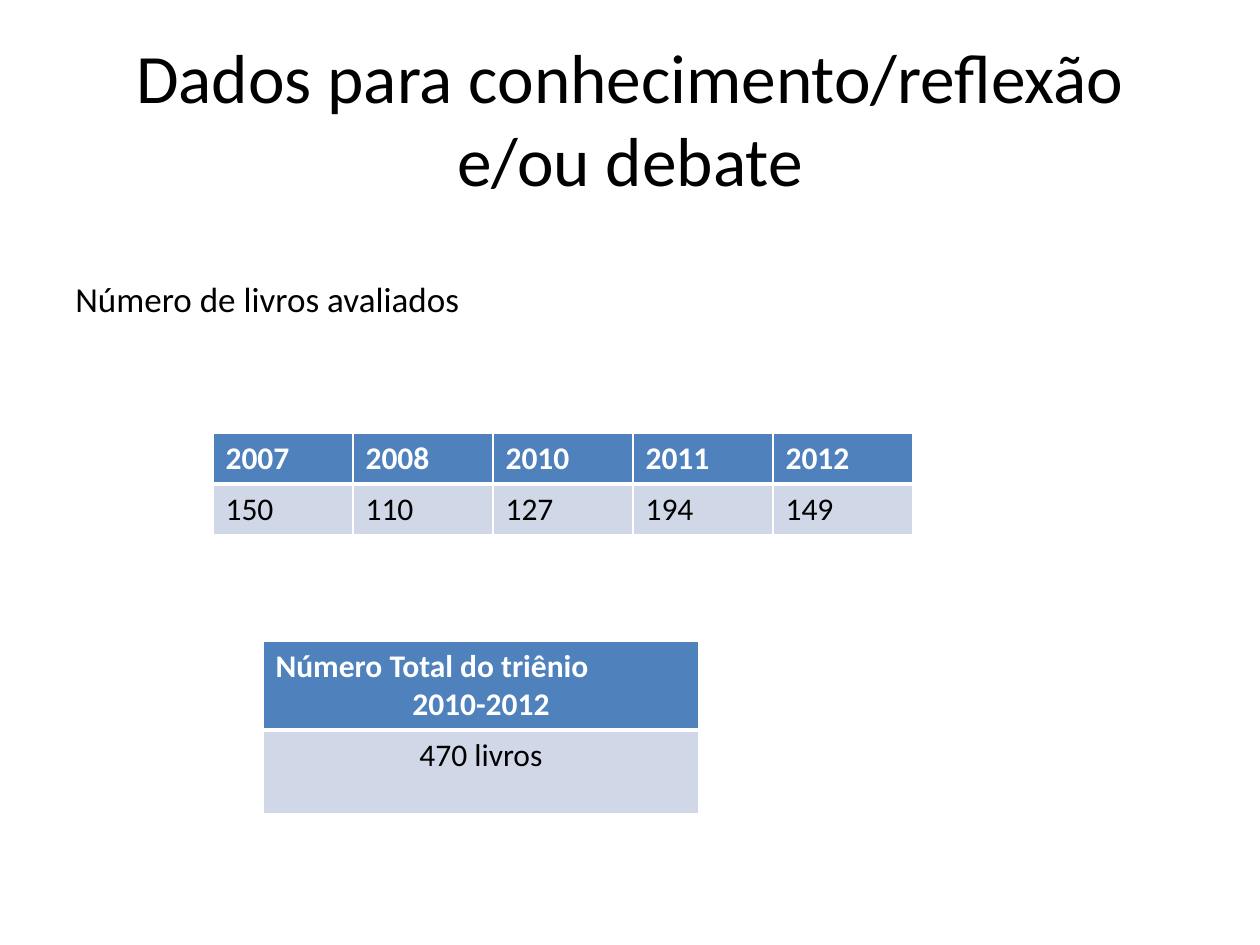
"""Build the slide on the number of evaluated books."""
import pptx
import pptx.dml.color
import pptx.enum.text
import pptx.oxml
import pptx.oxml.ns
import pptx.util

RGBColor = pptx.dml.color.RGBColor
ALIGN = pptx.enum.text.PP_ALIGN
ANCHOR = pptx.enum.text.MSO_ANCHOR

BLACK = RGBColor(0x00, 0x00, 0x00)
WHITE = RGBColor(0xFF, 0xFF, 0xFF)
HEADER_BLUE = RGBColor(0x4F, 0x81, 0xBD)
BODY_BLUE = RGBColor(0xD0, 0xD8, 0xE8)
FONT = "Calibri"
PX = 914400 / 126

TEXTS = [
    ((63, 38, 1134, 158), "Dados para conhecimento/reflexão e/ou debate",
     39.6, ALIGN.CENTER, ANCHOR.MIDDLE),
    ((63, 271, 1134, 56), "Número de livros avaliados",
     20, ALIGN.LEFT, ANCHOR.TOP),
]

TABLES = [
    {
        "origin": (213, 433),
        "column_width": 140,
        "row_heights": (51, 51),
        "rows": [
            [[(year, ALIGN.LEFT)] for year in ("2007", "2008", "2010", "2011", "2012")],
            [[(count, ALIGN.LEFT)] for count in ("150", "110", "127", "194", "149")],
        ],
    },
    {
        "origin": (263, 641),
        "column_width": 436,
        "row_heights": (89, 84),
        "rows": [
            [[("Número Total do triênio", ALIGN.LEFT), ("2010-2012", ALIGN.CENTER)]],
            [[("470 livros", ALIGN.CENTER)]],
        ],
    },
]


def px(length):
    return pptx.util.Emu(round(length * PX))


def write(frame, lines, size, color, bold=False):
    for index, (text, alignment) in enumerate(lines):
        paragraph = frame.add_paragraph() if index else frame.paragraphs[0]
        paragraph.alignment = alignment
        run = paragraph.add_run()
        run.text = text
        run.font.name = FONT
        run.font.size = pptx.util.Pt(size)
        run.font.bold = bold
        run.font.color.rgb = color


def set_borders(cell, widths):
    properties = cell._tc.get_or_add_tcPr()
    namespace = pptx.oxml.ns.nsdecls("a")
    for index, (side, width) in enumerate(widths.items()):
        border = pptx.oxml.parse_xml(
            f'<a:ln{side} {namespace} w="{pptx.util.Pt(width)}"><a:solidFill>'
            f'<a:srgbClr val="{WHITE}"/></a:solidFill></a:ln{side}>')
        properties.insert(index, border)


def add_text(slide, box, text, size, alignment, anchor):
    shape = slide.shapes.add_textbox(*map(px, box))
    frame = shape.text_frame
    frame.word_wrap = True
    frame.vertical_anchor = anchor
    write(frame, [(text, alignment)], size, BLACK)


def add_table(slide, origin, column_width, row_heights, rows):
    column_count = len(rows[0])
    size = (column_width * column_count, sum(row_heights))
    shape = slide.shapes.add_table(len(rows), column_count, *map(px, origin + size))
    table = shape.table
    for column in table.columns:
        column.width = px(column_width)
    for row_index, (height, row) in enumerate(zip(row_heights, rows)):
        table.rows[row_index].height = px(height)
        header = row_index == 0
        for column_index, lines in enumerate(row):
            cell = table.cell(row_index, column_index)
            cell.fill.solid()
            cell.fill.fore_color.rgb = HEADER_BLUE if header else BODY_BLUE
            set_borders(cell, {"L": 1, "R": 1, "T": 1 if header else 3, "B": 3 if header else 1})
            write(cell.text_frame, lines, 18, WHITE if header else BLACK, header)


def main():
    presentation = pptx.Presentation()
    presentation.slide_width = px(1260)
    presentation.slide_height = px(945)
    slide = presentation.slides.add_slide(presentation.slide_layouts[6])
    for text in TEXTS:
        add_text(slide, *text)
    for table in TABLES:
        add_table(slide, **table)
    presentation.save("out.pptx")


if __name__ == "__main__":
    main()
